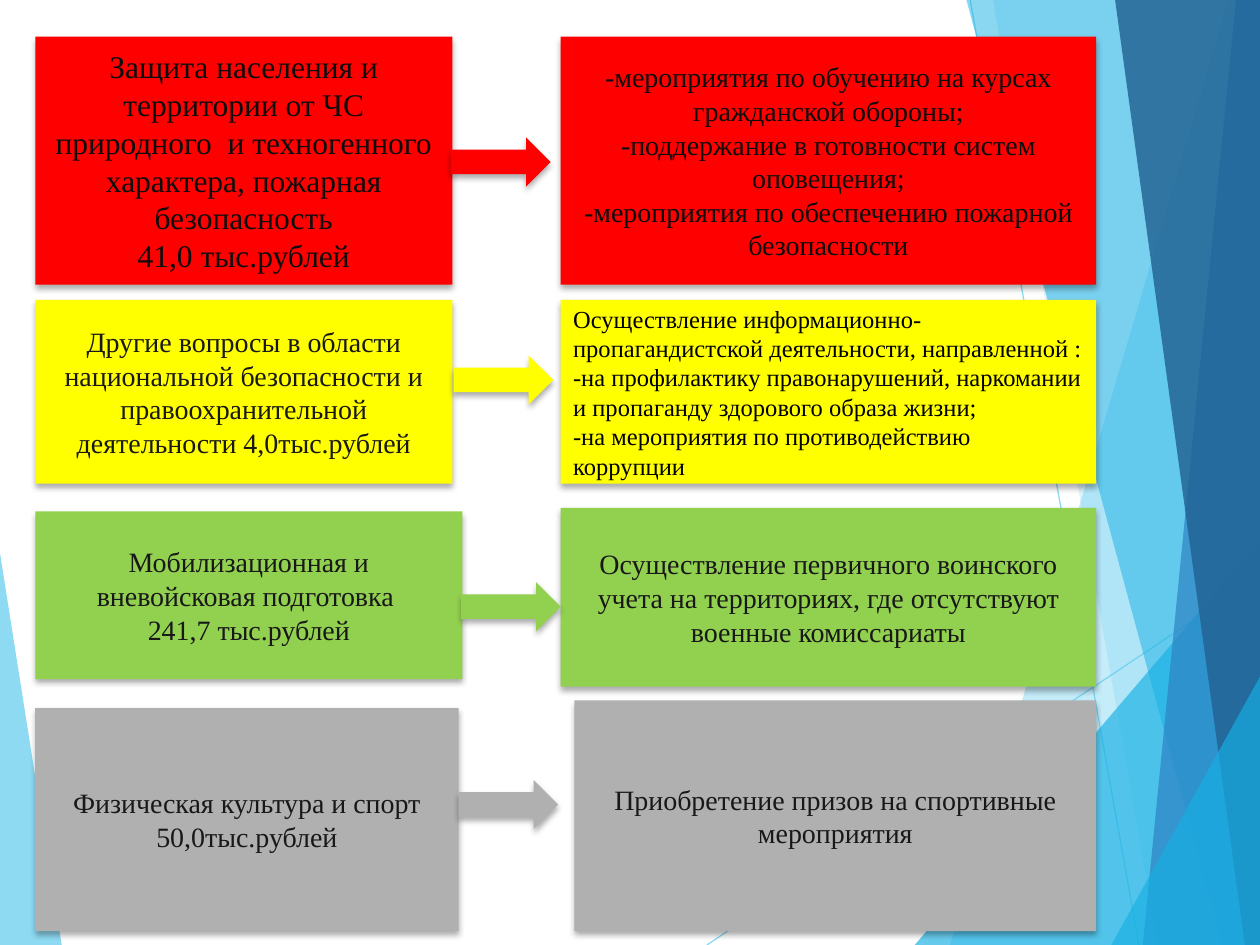
import pptx
import pptx.dml.color
import pptx.enum.shapes
import pptx.enum.text
import pptx.oxml
import pptx.oxml.ns
import pptx.util
from dataclasses import dataclass

Inches = pptx.util.Inches
MSO_SHAPE = pptx.enum.shapes.MSO_SHAPE
ALIGN = pptx.enum.text.PP_ALIGN


@dataclass(frozen=True)
class Theme:
    font: str = "Times New Roman"
    large: int = 18
    medium: int = 16
    small: int = 14
    black: str = "000000"
    dark: str = "0D0D0D"
    soft: str = "181818"
    red: str = "FF0000"
    yellow: str = "FFFF00"
    green: str = "92D050"
    grey: str = "B0B0B0"
    sky: str = "5FCBEF"
    cyan: str = "17B0E4"
    blue: str = "2E83C3"
    navy: str = "226292"


THEME = Theme()

# Background facets: colour, opacity in percent, corner points in inches
LEFT_FACET = (THEME.sky, 70, [(0, 4.39), (0.49, 7.5), (0, 7.5)])
RIGHT_FACETS = [
    (THEME.sky, 36, [(9.75, 0), (10, 0), (10, 7.5), (7.54, 7.5)]),
    (THEME.sky, 20, [(7.88, 0), (10, 0), (10, 7.5), (9.19, 7.5)]),
    (THEME.cyan, 66, [(7.26, 7.5), (10, 4.29), (10, 7.5)]),
    (THEME.cyan, 50, [(7.67, 0), (10, 0), (10, 7.5), (9.7, 7.5)]),
    (THEME.blue, 70, [(9.81, 0), (10, 0), (10, 7.5), (9.07, 7.5)]),
    (THEME.navy, 82, [(8.85, 0), (10, 0), (10, 7.5), (9.88, 7.5)]),
    (THEME.cyan, 66, [(8.82, 7.5), (10, 5.37), (10, 7.5)]),
]
RAYS = [((5.61, 7.5), (10, 4.57)), ((7.7, 0), (9.04, 7.5))]

# Each row: colour, text colour, arrow position, then topic and measures as
# (left, top, width, height), type size, alignment, paragraphs
ROWS = [
    (THEME.red, THEME.dark, (3.58, 1.09),
     ((0.28, 0.29, 3.31, 1.97), THEME.large, ALIGN.CENTER,
      ["Защита населения и территории от ЧС природного  и техногенного "
       "характера, пожарная безопасность", "41,0 тыс.рублей"]),
     ((4.45, 0.29, 4.25, 1.97), THEME.medium, ALIGN.CENTER,
      ["-мероприятия по обучению на курсах гражданской обороны;",
       "-поддержание в готовности систем оповещения;",
       "-мероприятия по обеспечению пожарной безопасности"])),
    (THEME.yellow, THEME.soft, (3.6, 2.82),
     ((0.28, 2.38, 3.31, 1.46), THEME.medium, ALIGN.CENTER,
      ["Другие вопросы в области национальной безопасности и "
       "правоохранительной деятельности 4,0тыс.рублей"]),
     ((4.45, 2.38, 4.25, 1.46), THEME.small, ALIGN.LEFT,
      ["Осуществление информационно-пропагандистской деятельности, "
       "направленной :",
       "-на профилактику правонарушений, наркомании и пропаганду "
       "здорового образа жизни;",
       "-на мероприятия по противодействию коррупции"])),
    (THEME.green, THEME.soft, (3.66, 4.62),
     ((0.28, 4.06, 3.39, 1.33), THEME.medium, ALIGN.CENTER,
      ["Мобилизационная и вневойсковая подготовка ", "241,7 тыс.рублей"]),
     ((4.45, 4.03, 4.25, 1.42), THEME.medium, ALIGN.CENTER,
      ["Осуществление первичного воинского учета на территориях, где "
       "отсутствуют военные комиссариаты"])),
    (THEME.grey, THEME.soft, (3.64, 6.19),
     ((0.28, 5.62, 3.36, 1.77), THEME.medium, ALIGN.CENTER,
      ["Физическая культура и спорт 50,0тыс.рублей"]),
     ((4.56, 5.56, 4.14, 1.83), THEME.medium, ALIGN.CENTER,
      ["Приобретение призов на спортивные мероприятия"])),
]
ARROW_SIZE = (0.79, 0.39)


def rgb(color):
    return pptx.dml.color.RGBColor.from_string(color)


def set_opacity(shape, percent):
    for color in shape._element.spPr.iter(pptx.oxml.ns.qn("a:srgbClr")):
        alpha = color.makeelement(pptx.oxml.ns.qn("a:alpha"), {"val": str(percent * 1000)})
        color.append(alpha)


def fill_plain(shape, color):
    shape.fill.solid()
    shape.fill.fore_color.rgb = rgb(color)
    shape.line.fill.background()
    shape.shadow.inherit = False


def add_soft_shadow(shape):
    effects = shape._element.spPr.find(pptx.oxml.ns.qn("a:effectLst"))
    effects.append(pptx.oxml.parse_xml(
        f'<a:outerShdw {pptx.oxml.ns.nsdecls("a")} blurRad="44450" dist="27940" '
        'dir="5400000" algn="ctr" rotWithShape="0">'
        '<a:srgbClr val="000000"><a:alpha val="32000"/></a:srgbClr></a:outerShdw>'))


def add_facet(page, color, opacity, corners):
    points = [(Inches(x), Inches(y)) for x, y in corners]
    builder = page.shapes.build_freeform(*points[0])
    builder.add_line_segments(points[1:], close=True)
    facet = builder.convert_to_shape()
    fill_plain(facet, color)
    set_opacity(facet, opacity)


def add_ray(page, start, end):
    ray = page.shapes.add_connector(
        pptx.enum.shapes.MSO_CONNECTOR.STRAIGHT, *map(Inches, start + end))
    ray.line.color.rgb = rgb(THEME.sky)
    ray.line.width = pptx.util.Pt(0.75)
    set_opacity(ray, 70)
    properties = ray._element.spPr
    properties.append(properties.makeelement(pptx.oxml.ns.qn("a:effectLst"), {}))


def add_block(page, kind, place, color):
    block = page.shapes.add_shape(kind, *map(Inches, place))
    fill_plain(block, color)
    add_soft_shadow(block)
    return block


def add_text_box(page, color, text_color, place, size, alignment, lines):
    box = add_block(page, MSO_SHAPE.RECTANGLE, place, color)
    frame = box.text_frame
    frame.word_wrap = True
    frame.vertical_anchor = pptx.enum.text.MSO_ANCHOR.MIDDLE
    frame.text = "\n".join(lines)
    for para in frame.paragraphs:
        para.alignment = alignment
        para.font.name = THEME.font
        para.font.size = pptx.util.Pt(size)
        para.font.color.rgb = rgb(text_color)


def main():
    deck = pptx.Presentation()
    deck.slide_width, deck.slide_height = Inches(10), Inches(7.5)
    page = deck.slides.add_slide(deck.slide_layouts[6])

    # Background
    add_facet(page, *LEFT_FACET)
    for ray in RAYS:
        add_ray(page, *ray)
    for facet in RIGHT_FACETS:
        add_facet(page, *facet)

    # Rows: topic, measures, arrow between them
    for color, text_color, arrow_position, topic, measures in ROWS:
        measures_color = THEME.black if color == THEME.yellow else text_color
        add_text_box(page, color, text_color, *topic)
        add_text_box(page, color, measures_color, *measures)
        add_block(page, MSO_SHAPE.RIGHT_ARROW, arrow_position + ARROW_SIZE, color)

    deck.save("out.pptx")


if __name__ == "__main__":
    main()
